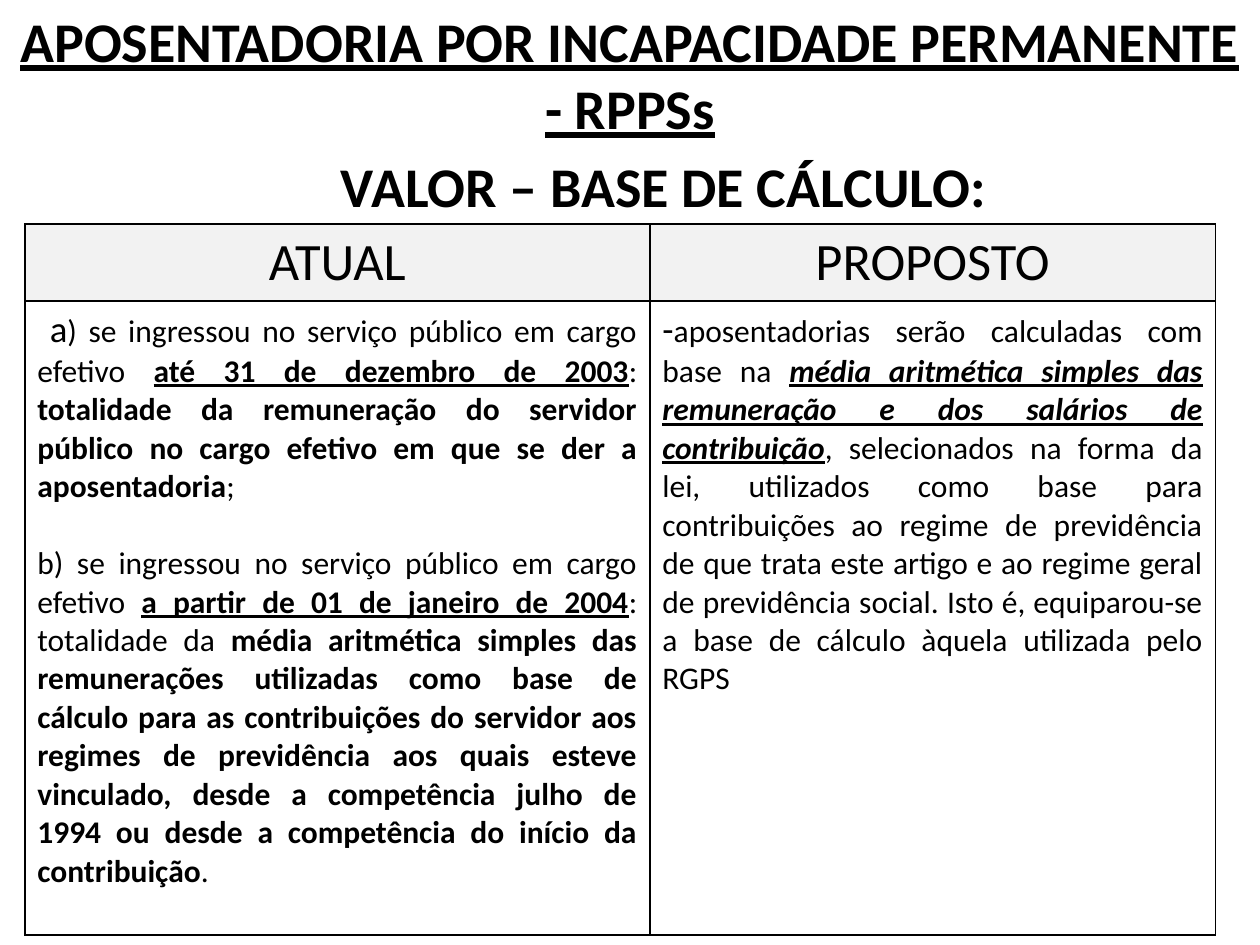
from lxml.etree import SubElement
from pptx import Presentation
from pptx.dml.color import RGBColor
from pptx.enum.text import MSO_ANCHOR, MSO_AUTO_SIZE, PP_ALIGN
from pptx.oxml.ns import qn
from pptx.util import Cm, Pt

BLACK = RGBColor(0x00, 0x00, 0x00)
WHITE = RGBColor(0xFF, 0xFF, 0xFF)
HEADER_GRAY = RGBColor(0xF2, 0xF2, 0xF2)
FONT = "Calibri"
PLAIN, BOLD, UNDERLINED, EMPHASIS = "", "b", "bu", "biu"

HEADINGS = ["ATUAL", "PROPOSTO"]
CURRENT_RULES = [
    [
        ("a", PLAIN, 21),
        (") se ingressou no serviço público em cargo efetivo ", PLAIN, 18),
        ("até 31 de dezembro de 2003", UNDERLINED, 18),
        (": ", PLAIN, 18),
        ("totalidade da remuneração do servidor público no cargo efetivo "
         "em que se der a aposentadoria", BOLD, 18),
        (";", PLAIN, 18),
    ],
    [
        ("b) se ingressou no serviço público em cargo efetivo ", PLAIN, 18),
        ("a partir de 01 de janeiro de 2004", UNDERLINED, 18),
        (": totalidade da ", PLAIN, 18),
        ("média aritmética simples das remunerações utilizadas como base de "
         "cálculo para as contribuições do servidor aos regimes de previdência "
         "aos quais esteve vinculado, desde a competência julho de 1994 ou "
         "desde a competência do início da contribuição", BOLD, 18),
        (".", PLAIN, 18),
    ],
]
PROPOSED_RULES = [
    [
        ("-", PLAIN, 21),
        ("aposentadorias serão calculadas com base na ", PLAIN, 18),
        ("média aritmética simples das remuneração e dos salários de "
         "contribuição", EMPHASIS, 18),
        (", selecionados na forma da lei, utilizados como base para "
         "contribuições ao regime de previdência de que trata este artigo e ao "
         "regime geral de previdência social. Isto é, equiparou-se a base de "
         "cálculo àquela utilizada pelo RGPS", PLAIN, 18),
    ],
]


def set_font(font, size, style=PLAIN):
    font.name = FONT
    font.size = Pt(size)
    font.color.rgb = BLACK
    font.bold = "b" in style
    font.italic = "i" in style
    font.underline = "u" in style


def set_indent(paragraph, left=0, first_line=0):
    properties = paragraph._p.get_or_add_pPr()
    properties.set("marL", str(Cm(left)))
    properties.set("indent", str(Cm(first_line)))


def add_borders(cell):
    properties = cell._tc.get_or_add_tcPr()
    for position, side in enumerate(("a:lnL", "a:lnR", "a:lnT", "a:lnB")):
        line = properties.makeelement(qn(side), {"w": str(Pt(1))})
        fill = SubElement(line, qn("a:solidFill"))
        SubElement(fill, qn("a:srgbClr"), val=str(BLACK))
        properties.insert(position, line)


def fill_cell(cell, color):
    cell.fill.solid()
    cell.fill.fore_color.rgb = color
    add_borders(cell)


def write_rules(cell, rules):
    frame = cell.text_frame
    for index, runs in enumerate(rules):
        paragraph = frame.add_paragraph() if index else frame.paragraphs[0]
        paragraph.alignment = PP_ALIGN.JUSTIFY
        paragraph.space_before = Pt(22 if index else 0)
        for text, style, size in runs:
            run = paragraph.add_run()
            run.text = text
            set_font(run.font, size, style)


def place_title(slide, left, top, width, height):
    title = slide.shapes.title
    title.left, title.top, title.width, title.height = left, top, width, height
    frame = title.text_frame
    frame.word_wrap = True
    frame.auto_size = MSO_AUTO_SIZE.NONE
    frame.vertical_anchor = MSO_ANCHOR.TOP
    heading = frame.paragraphs[0]
    heading.text = "APOSENTADORIA POR INCAPACIDADE PERMANENTE - RPPSs"
    heading.alignment = PP_ALIGN.CENTER
    set_font(heading.font, 32, UNDERLINED)
    subheading = frame.add_paragraph()
    subheading.text = "VALOR – BASE DE CÁLCULO:"
    subheading.alignment = PP_ALIGN.LEFT
    subheading.space_before = Pt(6.4)
    set_font(subheading.font, 32, BOLD)
    set_indent(subheading, left=6.62)


def place_comparison(slide, left, top, column_widths, row_heights):
    table = slide.shapes.add_table(
        len(row_heights), len(column_widths), left, top,
        sum(column_widths), sum(row_heights)).table
    for column, width in zip(table.columns, column_widths):
        column.width = width
    for row, height in zip(table.rows, row_heights):
        row.height = height
    for index, heading in enumerate(HEADINGS):
        cell = table.cell(0, index)
        fill_cell(cell, HEADER_GRAY)
        paragraph = cell.text_frame.paragraphs[0]
        paragraph.text = heading
        paragraph.alignment = PP_ALIGN.CENTER
        set_font(paragraph.font, 30)
    for index, rules in enumerate([CURRENT_RULES, PROPOSED_RULES]):
        cell = table.cell(1, index)
        fill_cell(cell, WHITE)
        write_rules(cell, rules)
    set_indent(table.cell(1, 0).text_frame.paragraphs[0], first_line=0.25)


def main():
    presentation = Presentation()
    presentation.slide_width = Cm(25.4)
    presentation.slide_height = Cm(19.05)
    slide = presentation.slides.add_slide(presentation.slide_layouts[5])
    place_title(slide, Cm(0), Cm(0), Cm(25.4), Cm(4.5))
    place_comparison(slide, Cm(0.5), Cm(4.52),
                     [Cm(12.6), Cm(11.4)], [Cm(1.55), Cm(12.78)])
    presentation.save("out.pptx")


if __name__ == "__main__":
    main()
